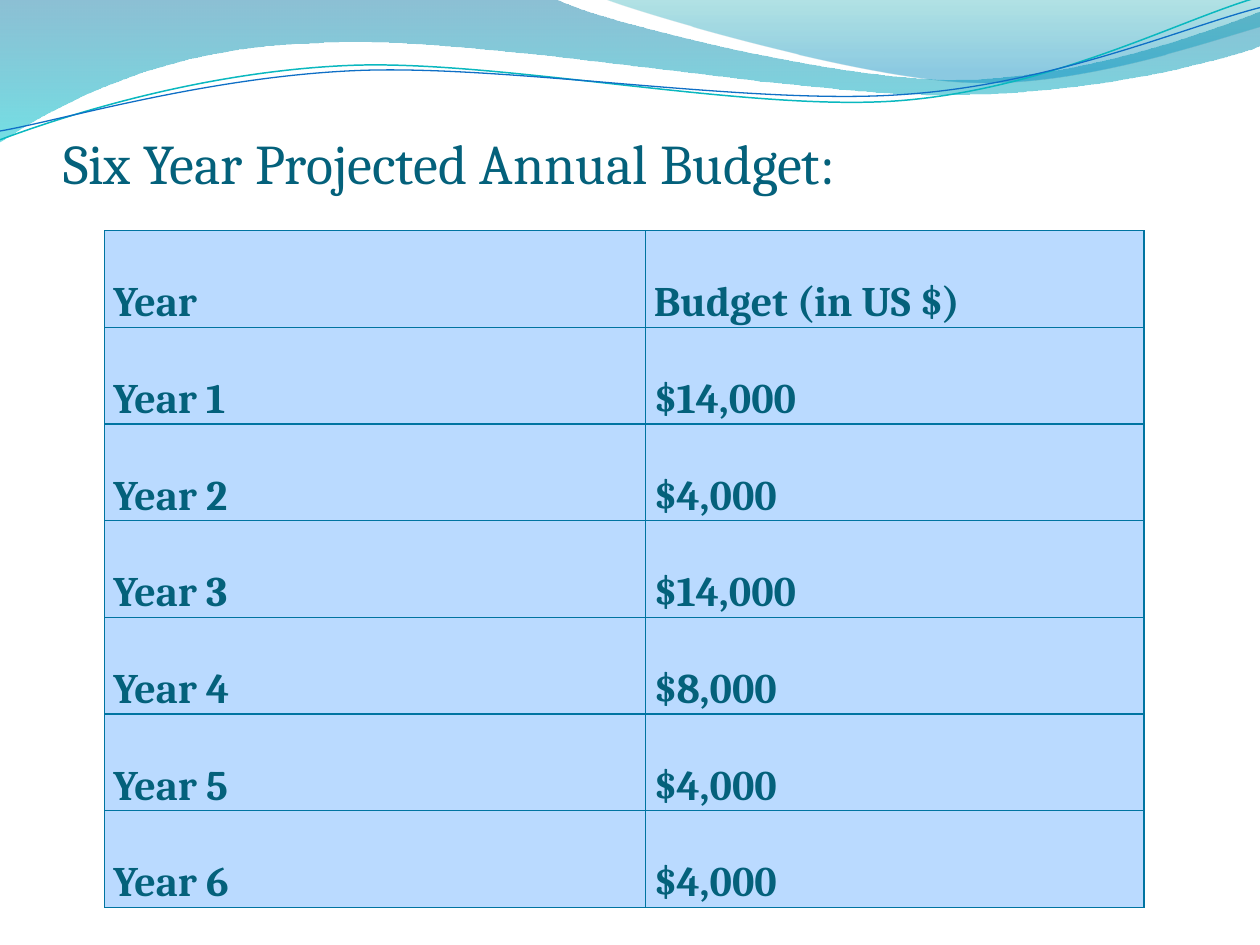
from dataclasses import dataclass
from math import cos, radians, sin
from typing import Optional

from lxml.etree import SubElement
from pptx import Presentation
from pptx.dml.color import RGBColor
from pptx.enum.text import MSO_ANCHOR as Anchor, MSO_AUTO_SIZE as AutoSize, PP_ALIGN as Align
from pptx.oxml import parse_xml
from pptx.oxml.ns import nsdecls, qn
from pptx.util import Inches, Pt

FONT = "Cambria"
TEXT, OUTLINE = "04617B", "009DD9"
CELL, BORDER = "BADAFF", "0074A1"
TILT = 357.3


@dataclass
class Stop:
    color: str
    opacity: int
    position: float


@dataclass
class Wave:
    box: tuple  # left, top, width, height
    start: tuple
    segments: list  # pairs are straight lines, sixes are Bézier curves
    stops: Optional[tuple] = None
    line: Optional[str] = None
    width: float = 0
    rotation: float = 0


WAVES = [
    Wave((-0.01, -0.01, 10.02, 1.14), (0, 0),
         [(4.4, -0.01),
          (4.76, 0.17, 6.64, 0.63, 7.58, 0.63),
          (8.53, 0.63, 9.58, 0.26, 10, 0.09),
          (10.01, 0.36),
          (9.83, 0.44, 8.7, 0.76, 7.46, 0.75),
          (6.22, 0.75, 3.82, 0.28, 2.57, 0.34),
          (1.29, 0.36, 0.46, 0.83, -0.01, 1.13),
          (0, 0)],
         stops=(Stop("0074A1", 45, 0), Stop("00C6CF", 55, 1))),
    Wave((4.79, -0.01, 5.21, 0.7), (4.79, -0.01),
         [(5.09, 0.11, 6.82, 0.62, 7.69, 0.65),
          (8.56, 0.69, 9.61, 0.32, 10, 0.21),
          (10, 0),
          (4.79, -0.01)],
         stops=(Stop("00A1A9", 30, 0), Stop("008BBF", 45, 0.8))),
    Wave((-0.02, 0.22, 10.02, 0.71), (0, 1.11),
         [(0.48, 0.93, 1.58, 0.57, 2.77, 0.52),
          (3.95, 0.47, 5.93, 0.89, 7.13, 0.8),
          (8.33, 0.71, 9.38, 0.15, 9.98, -0.02)],
         line="0AB8BF", width=0.85, rotation=TILT),
    Wave((-0.02, 0.3, 10.03, 0.58), (0, 1.04),
         [(0.47, 0.96, 1.64, 0.61, 2.83, 0.56),
          (4.03, 0.51, 5.97, 0.84, 7.17, 0.75),
          (8.36, 0.67, 9.41, 0.21, 10, 0.06)],
         line="0F6FC6", width=0.75, rotation=TILT),
]

BUDGET = [
    ("Year", "Budget (in US $)"),
    ("Year 1", "$14,000"),
    ("Year 2", "$4,000"),
    ("Year 3", "$14,000"),
    ("Year 4", "$8,000"),
    ("Year 5", "$4,000"),
    ("Year 6", "$4,000"),
]
COLUMN_WIDTHS = (4.29, 3.96)
ROW_HEIGHT = 0.37  # rows grow to fit their double-spaced text


def rgb(color: str) -> RGBColor:
    return RGBColor.from_string(color)


def apply(target, values: dict) -> None:
    for name, value in values.items():
        setattr(target, name, value)


def local_point(wave: Wave, x: float, y: float) -> tuple:
    """Place a slide point in the wave's own box, before its rotation."""
    left, top, width, height = wave.box
    angle = radians(-wave.rotation)
    dx, dy = x - left - width / 2, y - top - height / 2
    return (Inches(dx * cos(angle) - dy * sin(angle) + width / 2),
            Inches(dx * sin(angle) + dy * cos(angle) + height / 2))


def bend(outline, wave: Wave) -> None:
    """Turn the straight steps of the outline into curves where needed."""
    for step, segment in zip(outline.findall(qn("a:lnTo")), wave.segments):
        points = [local_point(wave, x, y) for x, y in zip(segment[::2], segment[1::2])]
        tag = "lnTo" if len(points) == 1 else "cubicBezTo"
        dots = "".join(f'<a:pt x="{x}" y="{y}"/>' for x, y in points)
        outline.replace(step, parse_xml(f'<a:{tag} {nsdecls("a")}>{dots}</a:{tag}>'))


def draw_wave(slide, wave: Wave) -> None:
    builder = slide.shapes.build_freeform(*local_point(wave, *wave.start), scale=1.0)
    builder.add_line_segments([local_point(wave, *s[-2:]) for s in wave.segments],
                              close=wave.stops is not None)
    shape = builder.convert_to_shape()
    left, top, width, height = map(Inches, wave.box)
    outline = next(shape._element.iter(qn("a:path")))
    outline.set("w", str(width))
    outline.set("h", str(height))
    start = next(outline.iter(qn("a:pt")))
    for axis, value in zip("xy", local_point(wave, *wave.start)):
        start.set(axis, str(value))
    bend(outline, wave)
    apply(shape, {"left": left, "top": top, "width": width, "height": height,
                  "rotation": wave.rotation})
    shape.shadow.inherit = False
    if wave.stops is None:
        shape.fill.background()
        shape.line.color.rgb = rgb(wave.line)
        shape.line.width = Pt(wave.width)
        return
    shape.line.fill.background()
    shape.fill.gradient()
    shape.fill.gradient_angle = 270
    for target, stop in zip(shape.fill.gradient_stops, wave.stops):
        target.color.rgb = rgb(stop.color)
        target.position = stop.position
    for color, stop in zip(shape._element.spPr.iter(qn("a:srgbClr")), wave.stops):
        SubElement(color, qn("a:alpha"), val=str(stop.opacity * 1000))


def line_xml(tag: str, color: str, width: float):
    return parse_xml(f'<a:{tag} {nsdecls("a")} w="{Pt(width)}"><a:solidFill>'
                     f'<a:srgbClr val="{color}"/></a:solidFill></a:{tag}>')


def write(paragraph, text: str, size: int, bold: bool) -> None:
    run = paragraph.add_run()
    run.text = text
    apply(run.font, {"name": FONT, "size": Pt(size), "bold": bold})
    run.font.color.rgb = rgb(TEXT)
    run.font._element.insert(0, line_xml("ln", OUTLINE, 0.75))


def draw_title(slide, text: str) -> None:
    title = slide.shapes.title
    apply(title, {"left": Inches(0.5), "top": Inches(0.85),
                  "width": Inches(6.75), "height": Inches(1.05)})
    frame = title.text_frame
    apply(frame, {"margin_left": 0, "margin_right": 0, "margin_top": Inches(0.17),
                  "margin_bottom": Inches(0.35), "vertical_anchor": Anchor.MIDDLE,
                  "auto_size": AutoSize.NONE, "word_wrap": True})
    frame.paragraphs[0].alignment = Align.LEFT
    write(frame.paragraphs[0], text, 32, False)


def fill_cell(cell, text: str) -> None:
    apply(cell, {"margin_left": Inches(0.07), "margin_right": Inches(0.07),
                 "margin_top": 0, "margin_bottom": 0})
    for side in ("lnL", "lnR", "lnT", "lnB"):
        cell._tc.get_or_add_tcPr().append(line_xml(side, BORDER, 0.75))
    cell.fill.solid()
    cell.fill.fore_color.rgb = rgb(CELL)
    paragraph = cell.text_frame.paragraphs[0]
    paragraph.line_spacing = 2.0
    write(paragraph, text, 24, True)


def draw_budget(slide) -> None:
    budget = slide.shapes.add_table(
        len(BUDGET), len(COLUMN_WIDTHS), Inches(0.83), Inches(1.83),
        Inches(sum(COLUMN_WIDTHS)), Inches(ROW_HEIGHT * len(BUDGET))).table
    apply(budget, {"first_row": False, "horz_banding": False})
    for column, width in zip(budget.columns, COLUMN_WIDTHS):
        column.width = Inches(width)
    for row, texts in zip(budget.rows, BUDGET):
        row.height = Inches(ROW_HEIGHT)
        for cell, text in zip(row.cells, texts):
            fill_cell(cell, text)


def main() -> None:
    deck = Presentation()
    apply(deck, {"slide_width": Inches(10), "slide_height": Inches(7.5)})
    slide = deck.slides.add_slide(deck.slide_layouts[5])

    # Waves along the top edge
    for wave in WAVES:
        draw_wave(slide, wave)

    # Budget table and heading
    draw_budget(slide)
    draw_title(slide, "Six Year Projected Annual Budget:")

    deck.save("out.pptx")


if __name__ == "__main__":
    main()
